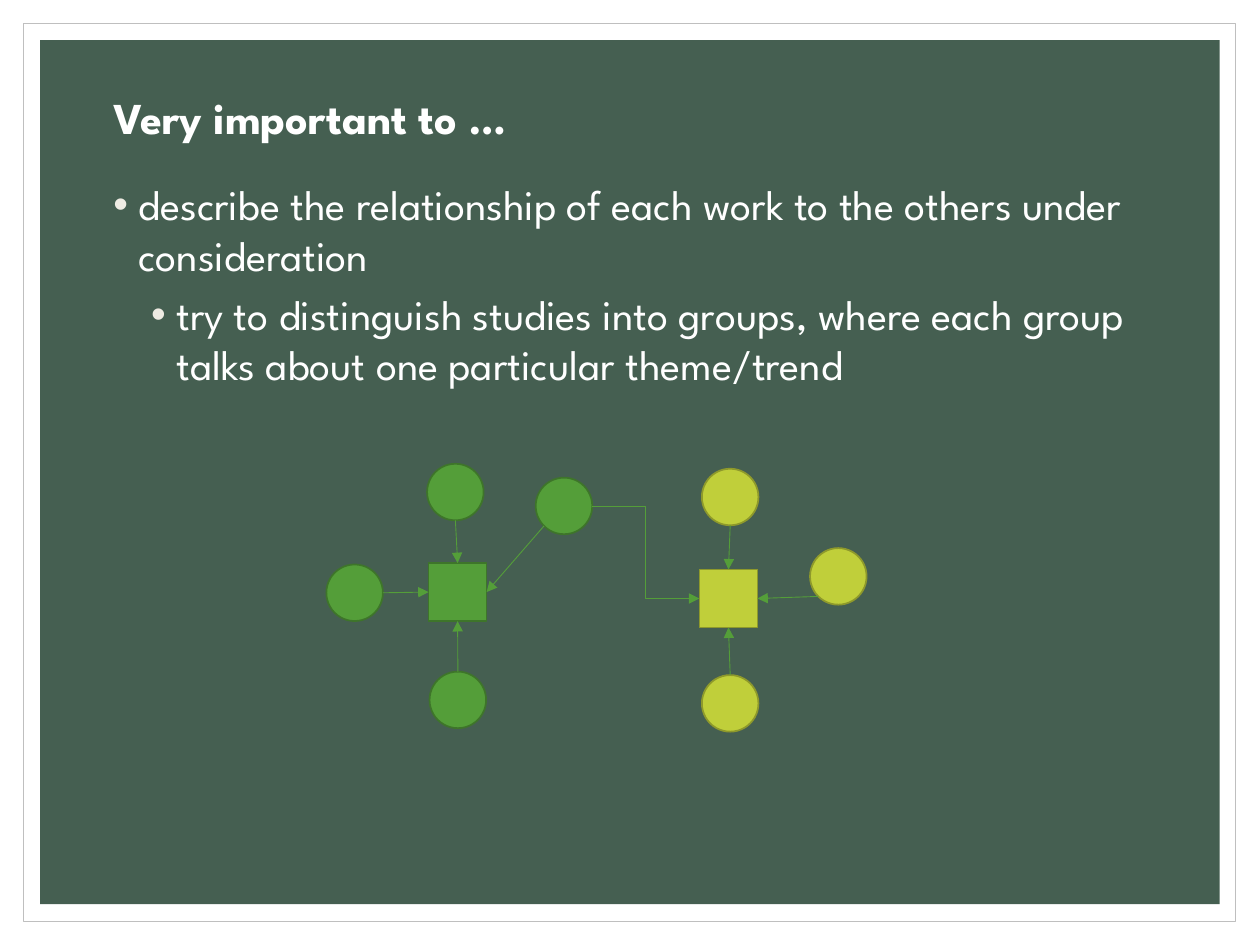
from math import cos, radians, sin

from lxml.etree import SubElement, Element
from pptx import Presentation
from pptx.dml.color import RGBColor
from pptx.enum.shapes import MSO_CONNECTOR as Connector, MSO_SHAPE as Preset
from pptx.enum.text import MSO_ANCHOR, MSO_AUTO_SIZE, PP_ALIGN
from pptx.oxml.ns import qn
from pptx.util import Cm, Pt

FONT = "League Spartan"
WHITE = RGBColor(0xFF, 0xFF, 0xFF)
GREY = RGBColor(0xBF, 0xBF, 0xBF)
DARK_GREEN = RGBColor(0x45, 0x5F, 0x51)
GREEN = RGBColor(0x54, 0x9E, 0x39)
GREEN_EDGE = RGBColor(0x3E, 0x75, 0x2A)
LIME = RGBColor(0xC0, 0xCF, 0x3A)
LIME_EDGE = RGBColor(0x8E, 0x99, 0x2B)
BULLET = RGBColor(0xEE, 0xEB, 0xE3)

# Content
TITLE = "Very important to …"
# text, level, left indent (cm), space before (pt)
POINTS = [
    ("describe the relationship of each work to the others under consideration", 0, 0.51, 9),
    ("try to distinguish studies into groups, where each group talks about "
     "one particular theme/trend", 1, 1.27, 5),
]
HANGING = 0.51

# Diagram, in cm: each group has one theme square and the studies around it
CIRCLE, SQUARE = 1.14, 1.17
GROUPS = {
    "green": {
        "colors": (GREEN, GREEN_EDGE),
        "theme": (8.64, 11.35),
        "studies": {"left": (6.58, 11.38), "top": (8.61, 9.35),
                    "shared": (10.8, 9.63), "bottom": (8.66, 13.54)},
    },
    "lime": {
        "colors": (LIME, LIME_EDGE),
        "theme": (14.1, 11.48),
        "studies": {"top": (14.15, 9.45), "right": (16.33, 11.05),
                    "bottom": (14.15, 13.61)},
    },
}
# Circle sites run counterclockwise from the top in steps of 45 degrees
TOP, LEFT, BOTTOM, RIGHT = range(4)
CIRCLE_BOTTOM_LEFT, CIRCLE_BOTTOM, CIRCLE_RIGHT, CIRCLE_TOP = 3, 4, 6, 0
# study group, study, circle site, theme group, square side, connector kind
ARROWS = [
    ("green", "shared", CIRCLE_BOTTOM_LEFT, "green", RIGHT, Connector.STRAIGHT),
    ("green", "bottom", CIRCLE_TOP, "green", BOTTOM, Connector.STRAIGHT),
    ("green", "left", CIRCLE_RIGHT, "green", LEFT, Connector.STRAIGHT),
    ("green", "top", CIRCLE_BOTTOM, "green", TOP, Connector.STRAIGHT),
    ("green", "shared", CIRCLE_RIGHT, "lime", LEFT, Connector.ELBOW),
    ("lime", "top", CIRCLE_BOTTOM, "lime", TOP, Connector.STRAIGHT),
    ("lime", "right", CIRCLE_BOTTOM_LEFT, "lime", RIGHT, Connector.STRAIGHT),
    ("lime", "bottom", CIRCLE_TOP, "lime", BOTTOM, Connector.STRAIGHT),
]


def place(shape, left, top, width, height):
    shape.left, shape.top = Cm(left), Cm(top)
    shape.width, shape.height = Cm(width), Cm(height)


def add_filled(slide, preset, box, fill, edge=None, weight=1):
    shape = slide.shapes.add_shape(preset, *map(Cm, box))
    shape.shadow.inherit = False
    shape.fill.solid()
    shape.fill.fore_color.rgb = fill
    if edge is None:
        shape.line.fill.background()
    else:
        shape.line.color.rgb = edge
        shape.line.width = Pt(weight)
    return shape


def format_text(paragraph, size, bold=False):
    paragraph.alignment = PP_ALIGN.LEFT
    font = paragraph.font
    font.name, font.size, font.bold = FONT, Pt(size), bold
    font.color.rgb = WHITE


def set_bullet(paragraph, indent):
    properties = paragraph._p.get_or_add_pPr()
    properties.set("marL", str(Cm(indent)))
    properties.set("indent", str(-Cm(HANGING)))
    color = SubElement(properties, qn("a:buClr"))
    SubElement(color, qn("a:srgbClr"), val=str(BULLET))
    SubElement(properties, qn("a:buFont"), typeface="Arial")
    SubElement(properties, qn("a:buChar"), char="•")


def add_arrow(slide, circle, site, square, side, kind):
    angle = radians(90 + 45 * site)
    radius = circle.width / 2
    x = round(circle.left + radius + radius * cos(angle))
    y = round(circle.top + radius - radius * sin(angle))
    connector = slide.shapes.add_connector(kind, x, y, x, y)
    connector.end_connect(square, side)
    joints = connector._element.find(".//" + qn("p:cNvCxnSpPr"))
    joints.insert(0, Element(qn("a:stCxn"), id=str(circle.shape_id), idx=str(site)))
    connector.line.color.rgb = GREEN
    connector.line.width = Pt(0.5)
    SubElement(connector.line._get_or_add_ln(), qn("a:tailEnd"), type="triangle")
    SubElement(connector._element.spPr, qn("a:effectLst"))


def main():
    presentation = Presentation()
    presentation.slide_width, presentation.slide_height = Cm(25.4), Cm(19.05)
    slide = presentation.slides.add_slide(presentation.slide_layouts[1])
    title, body = slide.placeholders

    # Frame and panel, behind the placeholders
    frame = add_filled(slide, Preset.RECTANGLE, (0.48, 0.48, 24.43, 18.09), WHITE, GREY, 0.5)
    panel = add_filled(slide, Preset.RECTANGLE, (0.81, 0.81, 23.78, 17.42), DARK_GREEN)
    for position, shape in enumerate((frame, panel), start=2):
        slide.shapes._spTree.insert(position, shape._element)

    # Title
    place(title, 2.03, 1.78, 21.34, 1.27)
    title.text_frame.text = TITLE
    title.text_frame.auto_size = MSO_AUTO_SIZE.NONE
    title.text_frame.vertical_anchor = MSO_ANCHOR.MIDDLE
    heading = title.text_frame.paragraphs[0]
    heading.line_spacing = 0.9
    format_text(heading, 25.2, bold=True)

    # Bulleted list
    place(body, 2.03, 3.48, 21.34, 13.28)
    text_frame = body.text_frame
    text_frame.text = "\n".join(point[0] for point in POINTS)
    text_frame.auto_size = MSO_AUTO_SIZE.NONE
    text_frame.vertical_anchor = MSO_ANCHOR.TOP
    for paragraph, (_, level, indent, space) in zip(text_frame.paragraphs, POINTS):
        paragraph.level = level
        paragraph.space_before = Pt(space)
        set_bullet(paragraph, indent)
        format_text(paragraph, 24)

    # Studies and themes
    studies = {
        (name, study): add_filled(slide, Preset.OVAL, (*corner, CIRCLE, CIRCLE), *group["colors"])
        for name, group in GROUPS.items()
        for study, corner in group["studies"].items()
    }
    themes = {
        name: add_filled(slide, Preset.RECTANGLE, (*group["theme"], SQUARE, SQUARE),
                         *group["colors"])
        for name, group in GROUPS.items()
    }

    # Arrows from studies to themes
    for group, study, site, theme, side, kind in ARROWS:
        add_arrow(slide, studies[group, study], site, themes[theme], side, kind)

    presentation.save("out.pptx")


if __name__ == "__main__":
    main()
